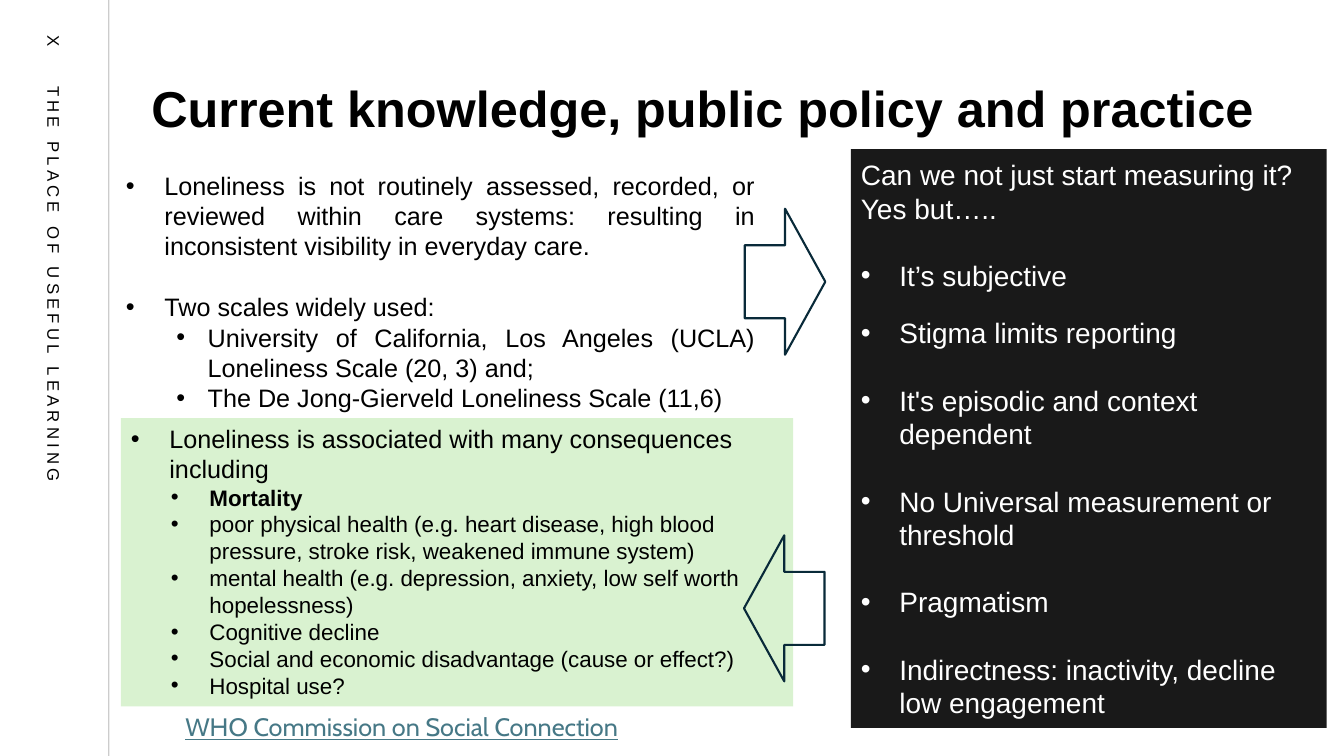
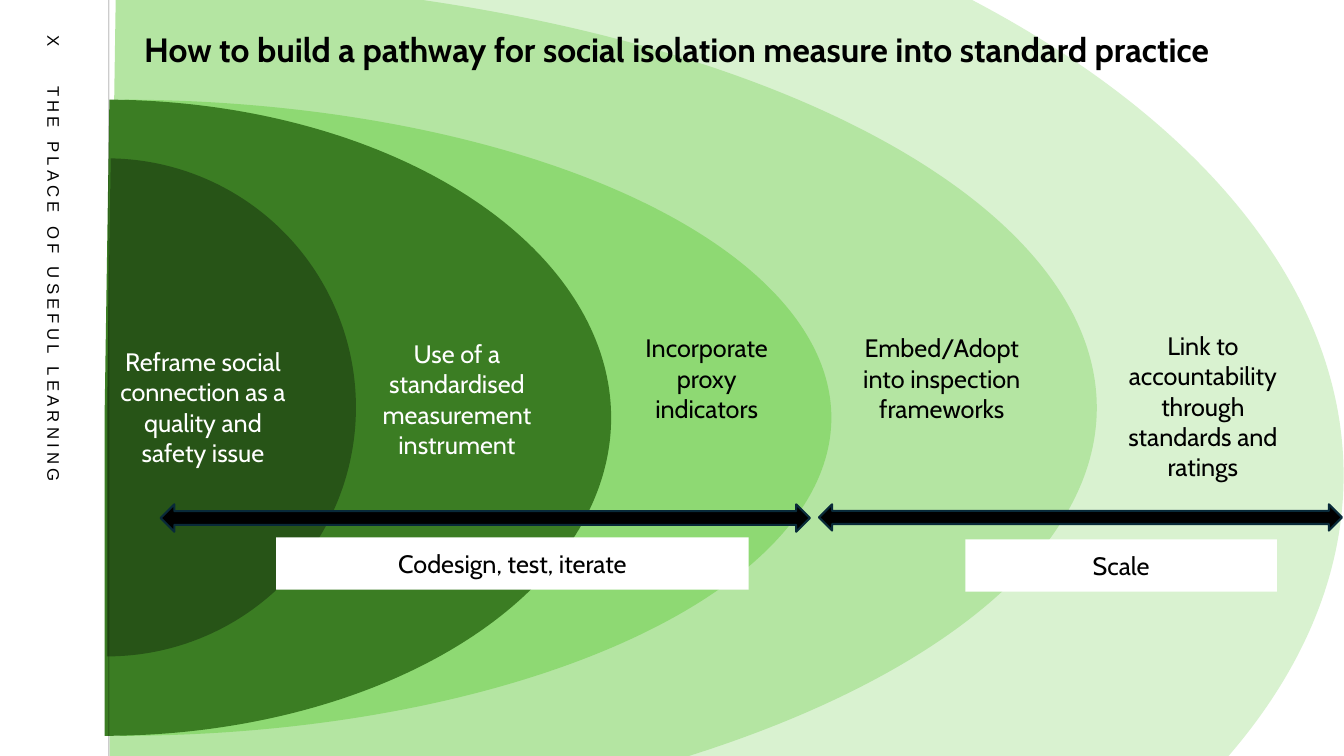
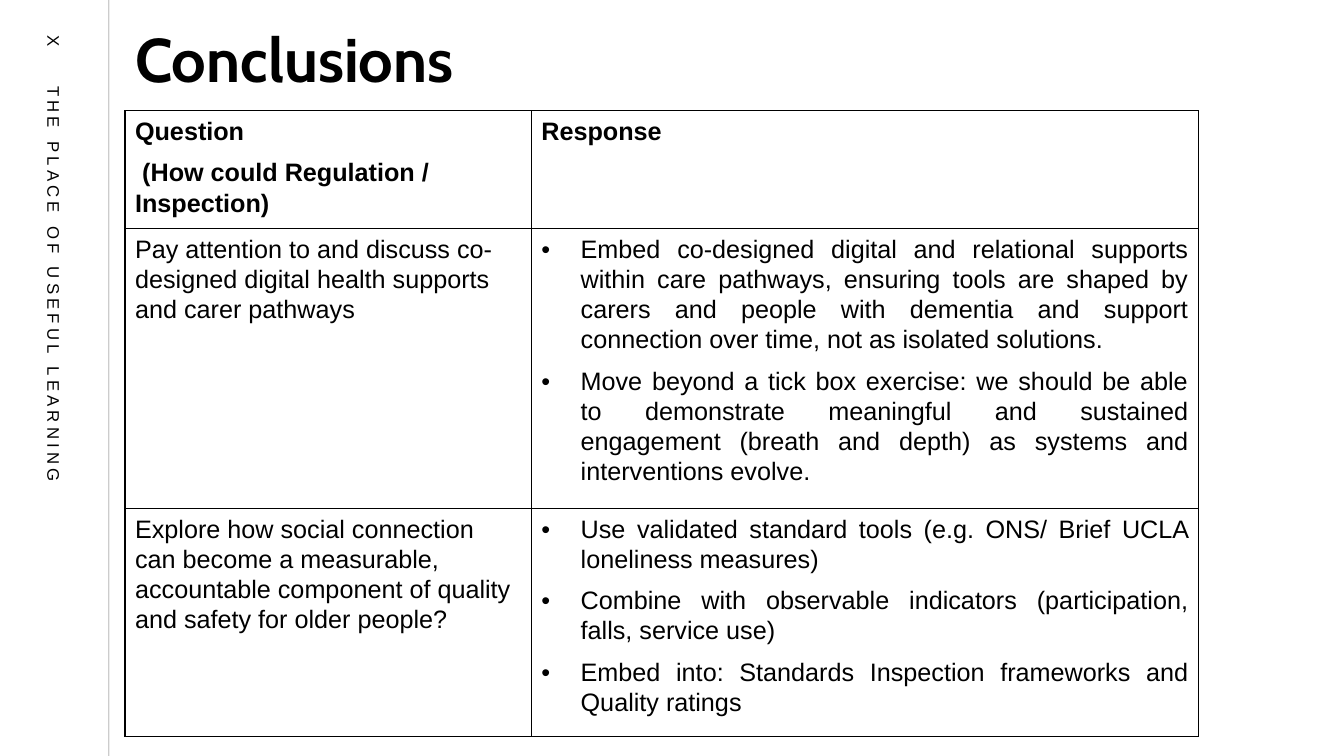
"""Build three slides on measuring loneliness and social isolation in care."""
import pptx
import pptx.util
import pptx.dml.color
import pptx.enum.shapes
import pptx.enum.text
import pptx.oxml
import pptx.oxml.ns

Cm, Pt = pptx.util.Cm, pptx.util.Pt
SHAPE = pptx.enum.shapes.MSO_SHAPE
ALIGN = pptx.enum.text.PP_ALIGN
ANCHOR = pptx.enum.text.MSO_ANCHOR
qn = pptx.oxml.ns.qn

COLOURS = {
    "black": "000000", "white": "FFFFFF", "navy": "092A39", "link": "467886",
    "green1": "D9F2D0", "green2": "B4E5A2", "green3": "8ED973",
    "green4": "3B7D23", "green5": "275417",
}

BASE = dict(size=18, font="Arial", colour="black", bold=False, align=ALIGN.LEFT,
            spacing=1.0, after=0, level=0, margin=0, indent=0, bullet=False)
JUSTIFIED = dict(bullet=True, align=ALIGN.JUSTIFY)
CABIN = dict(font="Cabin")
SUBPOINT = dict(size=16, level=2, bullet=True, margin=1.98, indent=-0.97)
TABLE = dict(spacing=1.07, after=8)
STYLES = {
    "rail": dict(size=12),
    "title": dict(size=36, bold=True, spacing=0.9),
    "pathway title": dict(CABIN, size=24, bold=True),
    "conclusion title": dict(CABIN, size=44, bold=True, spacing=0.9),
    "point": dict(JUSTIFIED, margin=0.97, indent=-0.97),
    "scale": dict(JUSTIFIED, level=1, margin=2.06, indent=-0.79),
    "panel": dict(size=20, colour="white"),
    "panel point": dict(size=20, colour="white", bullet=True, margin=0.97, indent=-0.97),
    "effect": dict(bullet=True, margin=0.97, indent=-0.97),
    "subpoint": SUBPOINT,
    "bold subpoint": dict(SUBPOINT, bold=True),
    "link": dict(CABIN, colour="link"),
    "dark label": dict(CABIN, align=ALIGN.CENTER),
    "light label": dict(CABIN, align=ALIGN.CENTER, colour="white"),
    "head": dict(TABLE, bold=True),
    "subhead": dict(TABLE, bold=True, indent=0.18),
    "question": TABLE,
    "answer": dict(TABLE, **JUSTIFIED, margin=0.99, indent=-0.99),
}

RAIL_TEXT = "X\tTHE PLACE OF USEFUL LEARNING"

KNOWLEDGE = [
    ("Loneliness is not routinely assessed, recorded, or reviewed within care systems: "
     "resulting in inconsistent visibility in everyday care.", "point", 0),
    ("Two scales widely used:", "point", 22),
    ("University of California, Los Angeles (UCLA) Loneliness Scale (20, 3) and;", "scale", 0),
    ("The De Jong-Gierveld Loneliness Scale (11,6)", "scale", 0),
]
BARRIERS = [
    ("Can we not just start measuring it? Yes but…..", "panel", 0),
    ("It’s subjective", "panel point", 24),
    ("Stigma limits reporting", "panel point", 17),
    ("It's episodic and context dependent", "panel point", 24),
    ("No Universal measurement or threshold", "panel point", 24),
    ("Pragmatism", "panel point", 24),
    ("Indirectness: inactivity, decline low engagement", "panel point", 24),
]
EFFECTS = [
    ("Loneliness is associated with many consequences including", "effect", 0),
    ("Mortality", "bold subpoint", 0),
    ("poor physical health (e.g. heart disease, high blood pressure, stroke risk, "
     "weakened immune system)", "subpoint", 0),
    ("mental health (e.g. depression, anxiety, low self worth hopelessness)", "subpoint", 0),
    ("Cognitive decline", "subpoint", 0),
    ("Social and economic disadvantage (cause or effect?)", "subpoint", 0),
    ("Hospital use?", "subpoint", 0),
]
KNOWLEDGE_ARROWS = [
    (SHAPE.RIGHT_ARROW, (18.77, 5.26, 2.03, 3.68)),
    (SHAPE.LEFT_ARROW, (18.75, 13.49, 2.03, 3.68)),
]

RINGS = [
    ("green1", (-27.86, -4.72, 61.72, 33.4)),
    ("green2", (-22.12, -0.56, 49.76, 21.67)),
    ("green3", (-14.91, 2.51, 35.86, 16.03)),
    ("green4", (-10.13, 2.51, 25.53, 16.03)),
    ("green5", (-3.58, 3.99, 12.55, 12.55)),
]
STEP_HEIGHT = 6.65
STEPS = [
    ("Reframe social connection as a quality and safety issue", "light label", (2.69, 6.93, 4.85)),
    ("Use of a standardised measurement instrument", "light label", (9.19, 6.73, 4.65)),
    ("Incorporate proxy indicators", "dark label", (15.65, 6.2, 4.32)),
    ("Embed/Adopt into inspection frameworks", "dark label", (21.31, 6.2, 4.85)),
    ("Link to accountability through standards and ratings", "dark label", (27.89, 6.91, 4.85)),
]
PHASES = [
    ("Codesign, test, iterate", (4.05, 12.71, 16.36, 0.69), (6.96, 13.54, 11.91, 1.32)),
    ("Scale", (20.64, 12.71, 13.18, 0.66), (24.33, 13.59, 7.85, 1.32)),
]

COLUMNS = [10.24, 16.81]
ROWS = [2.97, 7.05, 5.74]
CONCLUSIONS = [
    [[("Question", "head", 0), ("(How could Regulation / Inspection)", "subhead", 0)],
     [("Response", "head", 0)]],
    [[("Pay attention to and discuss co-designed digital health supports and carer pathways",
       "question", 0)],
     [("Embed co-designed digital and relational supports within care pathways, ensuring tools "
       "are shaped by carers and people with dementia and support connection over time, not as "
       "isolated solutions.", "answer", 0),
      ("Move beyond a tick box exercise: we should be able to demonstrate meaningful and "
       "sustained engagement (breath and depth) as systems and interventions evolve.",
       "answer", 0)]],
    [[("Explore how social connection can become a measurable, accountable component of quality "
       "and safety for older people?", "question", 0)],
     [("Use validated standard tools (e.g. ONS/ Brief UCLA loneliness measures)", "answer", 0),
      ("Combine with observable indicators (participation, falls, service use)", "answer", 0),
      ("Embed into: Standards Inspection frameworks and Quality ratings", "answer", 0)]],
]


def rgb(name):
    return pptx.dml.color.RGBColor.from_string(COLOURS[name])


def add_xml(parent, tag, **attributes):
    child = parent.makeelement(qn(tag), attributes)
    parent.append(child)
    return child


def set_opacity(sp, percent):
    for colour in list(sp.element.spPr.iter(qn("a:srgbClr"))):
        add_xml(colour, "a:alpha", val=str(percent * 1000))


def write(tf, paragraphs):
    for i, (text, name, before) in enumerate(paragraphs):
        style = {**BASE, **STYLES[name]}
        p = tf.add_paragraph() if i else tf.paragraphs[0]
        p.text = text
        p.level = style["level"]
        pPr = p._p.get_or_add_pPr()
        pPr.set("marL", str(Cm(style["margin"])))
        pPr.set("indent", str(Cm(style["indent"])))
        if style["bullet"]:
            add_xml(pPr, "a:buFont", typeface="Arial")
            add_xml(pPr, "a:buChar", char="•")
        else:
            add_xml(pPr, "a:buNone")
        p.alignment = style["align"]
        p.line_spacing = style["spacing"]
        p.space_before, p.space_after = Pt(before), Pt(style["after"])
        for r in p.runs:
            r.font.name, r.font.size = style["font"], Pt(style["size"])
            r.font.bold = style["bold"]
            r.font.color.rgb = rgb(style["colour"])


def place(sp, box):
    sp.left, sp.top, sp.width, sp.height = (Cm(v) for v in box)


def fill_text(sp, paragraphs, anchor=ANCHOR.MIDDLE):
    tf = sp.text_frame
    tf.word_wrap = True
    tf.auto_size = pptx.enum.text.MSO_AUTO_SIZE.NONE
    tf.vertical_anchor = anchor
    write(tf, paragraphs)
    return tf


def add_text(slide, box, paragraphs, anchor=ANCHOR.MIDDLE):
    sp = slide.shapes.add_textbox(*(Cm(v) for v in box))
    fill_text(sp, paragraphs, anchor)
    return sp


def add_shape(slide, kind, box, fill=None, line=None):
    sp = slide.shapes.add_shape(kind, *(Cm(v) for v in box))
    sp.shadow.inherit = False
    if fill:
        sp.fill.solid()
        sp.fill.fore_color.rgb = rgb(fill)
    else:
        sp.fill.background()
    if line:
        sp.line.color.rgb = rgb(line)
        sp.line.width = Pt(1.5)
    else:
        sp.line.fill.background()
    return sp


def add_title(slide, text, style, box):
    title = slide.shapes.title
    place(title, box)
    fill_text(title, [(text, style, 0)])
    title.element.getparent().append(title.element)


def add_rail(slide, height):
    line = slide.shapes.add_connector(
        pptx.enum.shapes.MSO_CONNECTOR.STRAIGHT, Cm(2.74), 0, Cm(2.74), height)
    line.line.color.rgb = rgb("black")
    line.line.width = Pt(1)
    set_opacity(line, 20)
    add_xml(line.element.spPr, "a:effectLst")
    sp = add_text(slide, (-5.84, 7.47, 14.4, 0.76), [(RAIL_TEXT, "rail", 0)], ANCHOR.TOP)
    sp.rotation = 90
    p = sp.text_frame.paragraphs[0]
    tabs = add_xml(p._p.get_or_add_pPr(), "a:tabLst")
    add_xml(tabs, "a:tab", pos=str(Cm(0.83)), algn="l")
    for r in p.runs:
        r.font._element.set("spc", "300")


def build_knowledge(prs):
    slide = prs.slides.add_slide(prs.slide_layouts[3])
    add_rail(slide, prs.slide_height)
    points, panel = slide.placeholders[1], slide.placeholders[2]
    for sp, box, fill in ((points, (2.92, 3.43, 16.36, 8.41), "white"),
                          (panel, (21.44, 3.76, 11.99, 14.58), "black")):
        place(sp, box)
        sp.fill.solid()
        sp.fill.fore_color.rgb = rgb(fill)
        set_opacity(sp, 90)
    fill_text(points, KNOWLEDGE, ANCHOR.TOP).margin_top = Cm(0.86)
    fill_text(panel, BARRIERS)
    link = add_text(slide, (4.42, 17.81, 16.94, 1.02),
                    [("WHO Commission on Social Connection", "link", 0)], ANCHOR.TOP)
    link.text_frame.paragraphs[0].runs[0].font.underline = True
    add_title(slide, "Current knowledge, public policy and practice", "title",
              (3.56, 0.97, 29.67, 3.68))
    effects = add_shape(slide, SHAPE.RECTANGLE, (3.05, 10.54, 16.94, 7.26), "green1")
    fill_text(effects, EFFECTS, ANCHOR.TOP)
    for kind, box in KNOWLEDGE_ARROWS:
        add_shape(slide, kind, box, line="navy")


def build_pathway(prs):
    slide = prs.slides.add_slide(prs.slide_layouts[5])
    for colour, box in RINGS:
        ring = add_shape(slide, SHAPE.PIE, box, colour)
        ring.rotation = 180
        ring.adjustments[0], ring.adjustments[1] = 54.52, 162
    add_rail(slide, prs.slide_height)
    for text, style, box in STEPS:
        add_text(slide, (*box, STEP_HEIGHT), [(text, style, 0)])
    add_title(slide, "How to build a pathway for social isolation measure into standard practice",
              "pathway title", (3.38, 0.61, 30.48, 1.27))
    for text, arrow, box in PHASES:
        add_shape(slide, SHAPE.LEFT_RIGHT_ARROW, arrow, "black", "navy")
        fill_text(add_shape(slide, SHAPE.RECTANGLE, box, "white"), [(text, "dark label", 0)])


def add_borders(cell):
    tcPr = cell._tc.get_or_add_tcPr()
    for side in "LRTB":
        line = add_xml(tcPr, "a:ln" + side, w=str(Pt(1)))
        add_xml(add_xml(line, "a:solidFill"), "a:srgbClr", val=COLOURS["black"])


def build_conclusions(prs):
    slide = prs.slides.add_slide(prs.slide_layouts[5])
    add_title(slide, "Conclusions", "conclusion title", (3.15, 0.69, 29.21, 1.78))
    add_rail(slide, prs.slide_height)
    table = slide.shapes.add_table(len(ROWS), len(COLUMNS), Cm(3.15), Cm(2.79),
                                   Cm(sum(COLUMNS)), Cm(sum(ROWS))).table
    table.first_row = table.horz_banding = False
    for column, width in zip(table.columns, COLUMNS):
        column.width = Cm(width)
    for row, height, contents in zip(table.rows, ROWS, CONCLUSIONS):
        row.height = Cm(height)
        for cell, paragraphs in zip(row.cells, contents):
            add_borders(cell)
            cell.fill.background()
            write(cell.text_frame, paragraphs)


def main():
    prs = pptx.Presentation()
    prs.slide_width, prs.slide_height = Cm(33.87), Cm(19.05)
    for build in (build_knowledge, build_pathway, build_conclusions):
        build(prs)
    prs.save("out.pptx")


if __name__ == "__main__":
    main()
